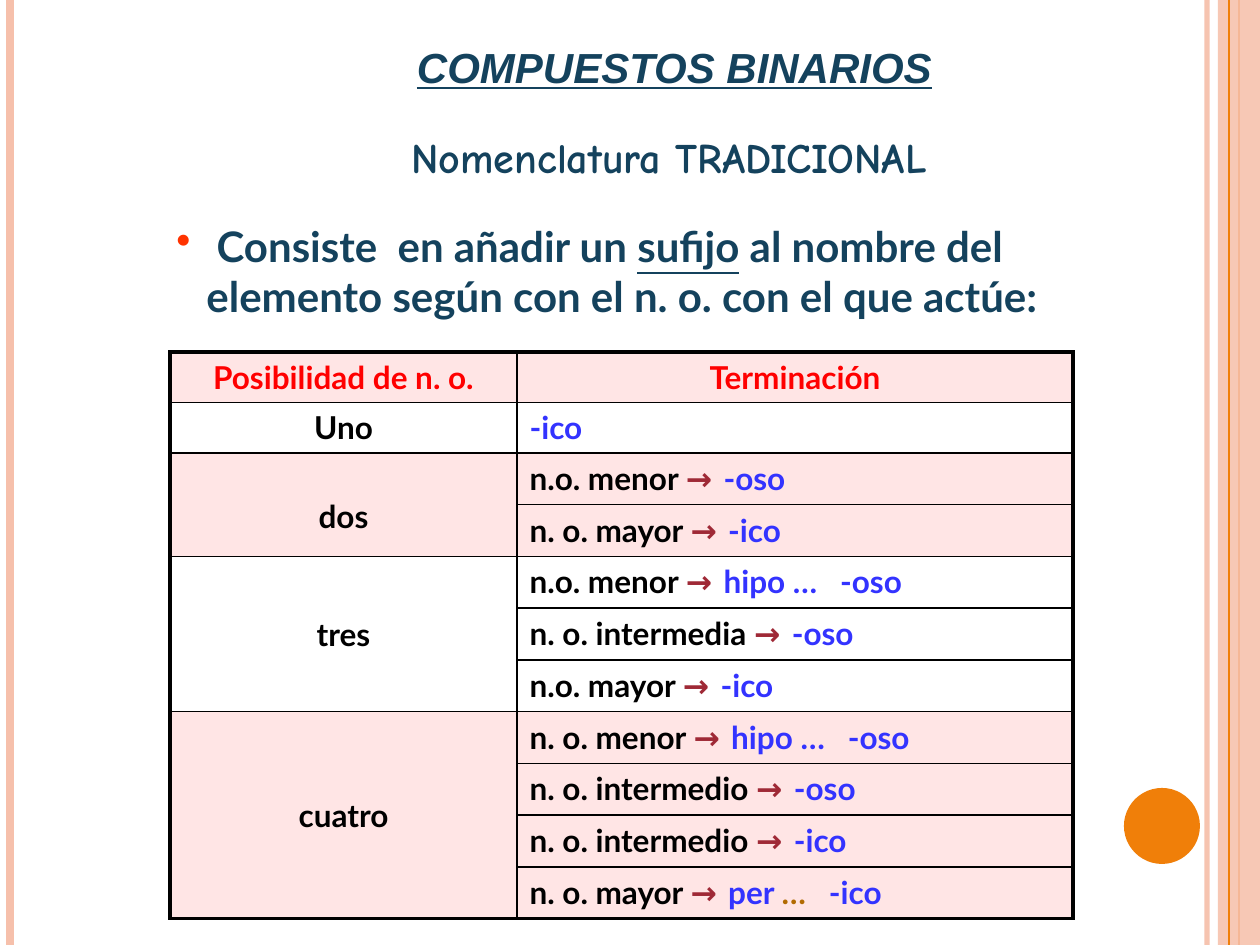
from dataclasses import dataclass

from lxml import etree
from pptx import Presentation
from pptx.dml.color import RGBColor
from pptx.enum.shapes import MSO_CONNECTOR, MSO_SHAPE
from pptx.enum.text import MSO_ANCHOR, MSO_AUTO_SIZE, PP_ALIGN
from pptx.oxml.ns import qn
from pptx.util import Pt

STRAIGHT = MSO_CONNECTOR.STRAIGHT
RECTANGLE, OVAL = MSO_SHAPE.RECTANGLE, MSO_SHAPE.OVAL
TOP, MIDDLE = MSO_ANCHOR.TOP, MSO_ANCHOR.MIDDLE
LEFT, CENTER = PP_ALIGN.LEFT, PP_ALIGN.CENTER
NO_AUTOFIT = MSO_AUTO_SIZE.NONE
EMU_PER_PX = 914400 / 126
WIDTH, HEIGHT = 1260, 945


@dataclass(frozen=True)
class Theme:
    """Colours, fonts and type sizes of the slide."""
    orange: str = "F07F09"
    peach: str = "F6C0AB"
    navy: str = "14425D"
    bullet: str = "FF3300"
    header: str = "FF0000"
    black: str = "000000"
    suffix: str = "3333FF"
    arrow: str = "9F2936"
    ellipsis: str = "B26B02"
    pink: str = "FFCCCC"
    white: str = "FFFFFF"
    title_font: str = "Arial"
    hand_font: str = "Comic Neue"
    body_font: str = "Lato"
    heading_size: int = 24
    table_size: int = 18
    thin: float = 1
    thick: float = 2.25


THEME = Theme()
OSO = [("-oso", THEME.suffix)]
ICO = [("-ico", THEME.suffix)]
HIPO_OSO = [("hipo …   -oso", THEME.suffix)]
PER_ICO = [("per ", THEME.suffix), ("…   ", THEME.ellipsis), ("-ico", THEME.suffix)]
GROUPS = [
    ("Uno", [("", ICO)]),
    ("dos", [("n.o. menor ", OSO), ("n. o. mayor ", ICO)]),
    ("tres", [("n.o. menor ", HIPO_OSO), ("n. o. intermedia ", OSO), ("n.o. mayor ", ICO)]),
    ("cuatro", [("n. o. menor ", HIPO_OSO), ("n. o. intermedio ", OSO),
                ("n. o. intermedio ", ICO), ("n. o. mayor ", PER_ICO)]),
]


def px(*lengths):
    """Turn pixel lengths into EMU."""
    return [round(length * EMU_PER_PX) for length in lengths]


def write_text(paragraph, text, font=THEME.body_font, size=THEME.table_size,
               color=THEME.black, bold=True, italic=False, underline=False):
    """Add one formatted run to a paragraph."""
    run = paragraph.add_run()
    run.text = text
    run.font.name, run.font.size = font, Pt(size)
    run.font.bold, run.font.italic, run.font.underline = bold, italic, underline
    run.font.color.rgb = RGBColor.from_string(color)


def set_fill(fill, color, opacity=100):
    """Apply a solid fill, see-through when opacity is below 100."""
    fill.solid()
    fill.fore_color.rgb = RGBColor.from_string(color)
    if opacity < 100:
        element = fill._xPr.find(qn("a:solidFill")).find(qn("a:srgbClr"))
        etree.SubElement(element, qn("a:alpha"), val=str(opacity * 1000))


def set_borders(cell, weights):
    """Draw the left, right, top and bottom borders of a cell."""
    properties = cell._tc.get_or_add_tcPr()
    for index, (side, weight) in enumerate(zip("LRTB", weights)):
        line = etree.Element(qn(f"a:ln{side}"), w=str(Pt(weight)))
        fill = etree.SubElement(line, qn("a:solidFill"))
        etree.SubElement(fill, qn("a:srgbClr"), val=THEME.black)
        properties.insert(index, line)


class SlideBuilder:
    """Holds the theme and the current slide."""

    def __init__(self, slide, theme):
        """Keep the slide and its theme."""
        self.slide, self.theme = slide, theme

    def rule(self, x, color, weight, opacity=100):
        """Draw a full-height vertical line."""
        connector = self.slide.shapes.add_connector(STRAIGHT, *px(x, 0, x, HEIGHT))
        connector.line.width = Pt(weight)
        set_fill(connector.line.fill, color, opacity)
        etree.SubElement(connector._element.spPr, qn("a:effectLst"))

    def shape(self, kind, box, color, opacity=100):
        """Draw a filled shape without outline."""
        shape = self.slide.shapes.add_shape(kind, *px(*box))
        shape.shadow.inherit = False
        shape.line.fill.background()
        set_fill(shape.fill, color, opacity)

    def frame(self, shape, box, align=LEFT):
        """Place a text shape and return its first paragraph."""
        shape.left, shape.top, shape.width, shape.height = px(*box)
        text_frame = shape.text_frame
        text_frame.word_wrap = True
        text_frame.auto_size = NO_AUTOFIT
        text_frame.vertical_anchor = TOP
        paragraph = text_frame.paragraphs[0]
        paragraph.alignment = align
        return paragraph

    def title(self, text, box):
        """Fill the title placeholder."""
        paragraph = self.frame(self.slide.shapes.title, box, CENTER)
        write_text(paragraph, text, font=self.theme.title_font, size=self.theme.heading_size,
                   color=self.theme.navy, italic=True, underline=True)

    def text_box(self, runs, box, align=LEFT, bullet_indent=0, **style):
        """Add a text box of (text, format) runs, bulleted when indented."""
        paragraph = self.frame(self.slide.shapes.add_textbox(*px(*box)), box, align)
        if bullet_indent:
            indent = px(bullet_indent)[0]
            properties = paragraph._p.get_or_add_pPr()
            properties.set("marL", str(indent))
            properties.set("indent", str(-indent))
            color = etree.SubElement(properties, qn("a:buClr"))
            etree.SubElement(color, qn("a:srgbClr"), val=self.theme.bullet)
            etree.SubElement(properties, qn("a:buChar"), char="•")
        for text, extra in runs:
            write_text(paragraph, text, **{"size": self.theme.heading_size,
                                           "color": self.theme.navy, **style, **extra})

    def cell(self, table, row, column, fill):
        """Fill and frame a cell and return its paragraph."""
        theme, cell = self.theme, table.cell(row, column)
        last = len(table.rows) - 1
        bottom = row + cell.span_height - 1 if cell.is_merge_origin else row
        set_fill(cell.fill, fill, 50)
        outer = (column == 0, column == 1, row == 0, bottom == last)
        set_borders(cell, [theme.thick if edge else theme.thin for edge in outer])
        paragraph = cell.text_frame.paragraphs[0]
        paragraph.alignment = CENTER if column == 0 or row == 0 else LEFT
        return paragraph

    def endings_table(self, headers, groups, origin, columns, row_height):
        """Add the table of endings, merging each group's label cell."""
        theme = self.theme
        count = 1 + sum(len(endings) for _, endings in groups)
        table = self.slide.shapes.add_table(
            count, 2, *px(*origin, sum(columns), count * row_height)).table
        table.first_row = table.horz_banding = False
        for column, width in enumerate(columns):
            table.columns[column].width = px(width)[0]
            write_text(self.cell(table, 0, column, theme.pink), headers[column],
                       color=theme.header)
        row = 1
        for index, (label, endings) in enumerate(groups):
            fill = theme.pink if index % 2 else theme.white
            label_cell = table.cell(row, 0)
            if len(endings) > 1:
                label_cell.merge(table.cell(row + len(endings) - 1, 0))
            label_paragraph = self.cell(table, row, 0, fill)
            write_text(label_paragraph, label)
            if len(endings) == 2:
                label_paragraph.line_spacing = 2.0
            elif len(endings) > 2:
                label_cell.vertical_anchor = MIDDLE
            for offset, (condition, suffixes) in enumerate(endings):
                if offset:
                    self.cell(table, row + offset, 0, fill)
                paragraph = self.cell(table, row + offset, 1, fill)
                if condition:
                    write_text(paragraph, condition)
                    write_text(paragraph, "→ ", font=theme.hand_font, color=theme.arrow)
                for text, color in suffixes:
                    write_text(paragraph, text, color=color)
            row += len(endings)


def main():
    """Build and save the slide."""
    presentation = Presentation()
    presentation.slide_width, presentation.slide_height = px(WIDTH, HEIGHT)
    slide = presentation.slides.add_slide(presentation.slide_layouts[5])
    builder = SlideBuilder(slide, THEME)
    builder.rule(1207, THEME.peach, 3, opacity=93)
    builder.rule(10, THEME.peach, 4.5)
    builder.rule(1239, THEME.orange, 1.5)
    builder.shape(RECTANGLE, (1218, 0, 42, HEIGHT), THEME.peach, opacity=87)
    builder.rule(1229, THEME.orange, 0.75)
    builder.shape(OVAL, (1124, 788, 76, 76), THEME.orange)
    builder.title("COMPUESTOS BINARIOS", (246, 35, 857, 63))
    builder.text_box([("Nomenclatura TRADICIONAL", {})], (144, 125, 1050, 53),
                     align=CENTER, font=THEME.hand_font)
    builder.text_box([(" ", {"color": THEME.bullet}),
                      ("Consiste  en añadir un ", {}),
                      ("sufijo", {"underline": True}),
                      (" al nombre del elemento según con el n. o. con el que actúe:", {})],
                     (164, 214, 1014, 115), bullet_indent=30)
    builder.endings_table(("Posibilidad de n. o.", "Terminación"), GROUPS,
                          origin=(170, 352), columns=(347, 556), row_height=50)
    presentation.save("out.pptx")


if __name__ == "__main__":
    main()
